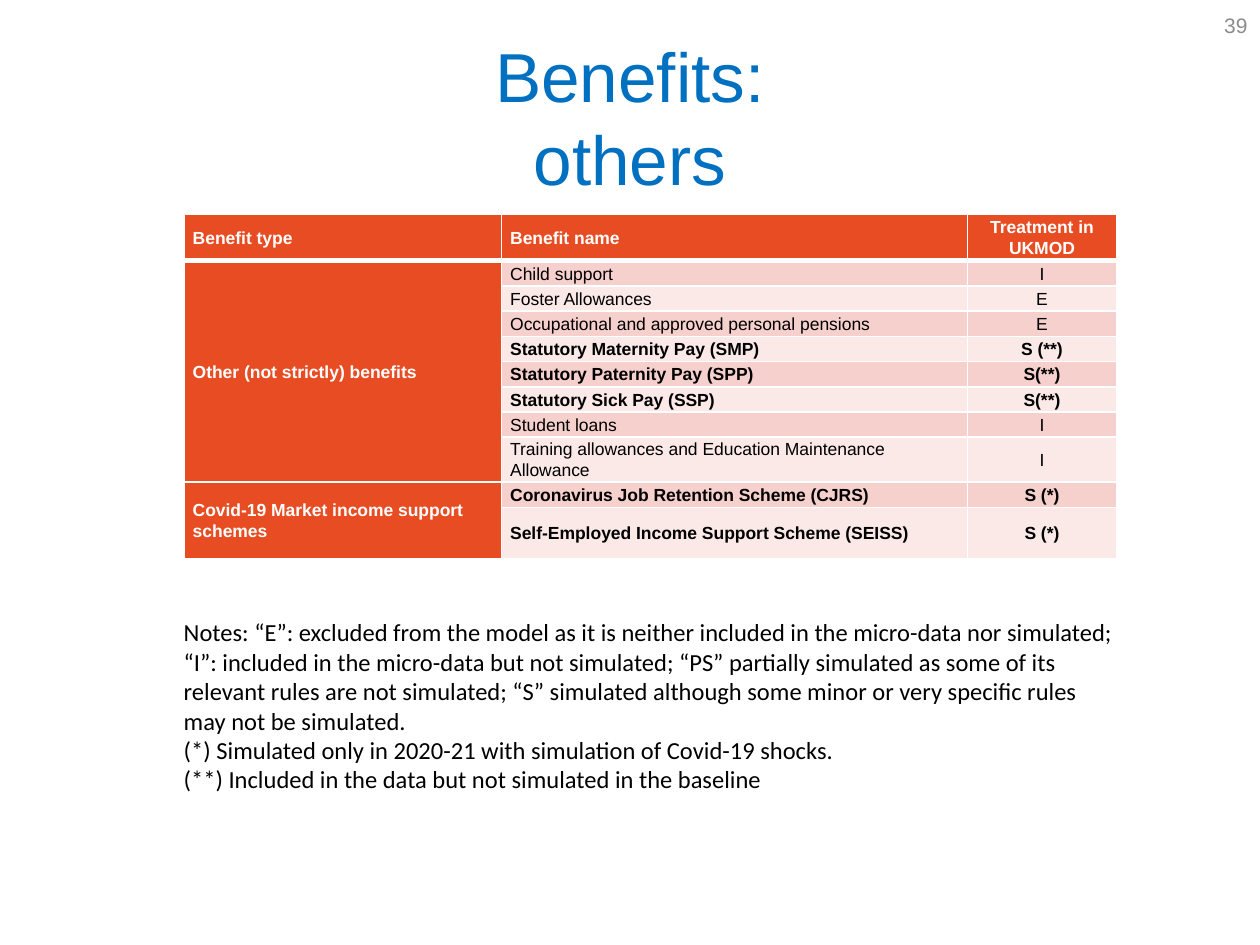
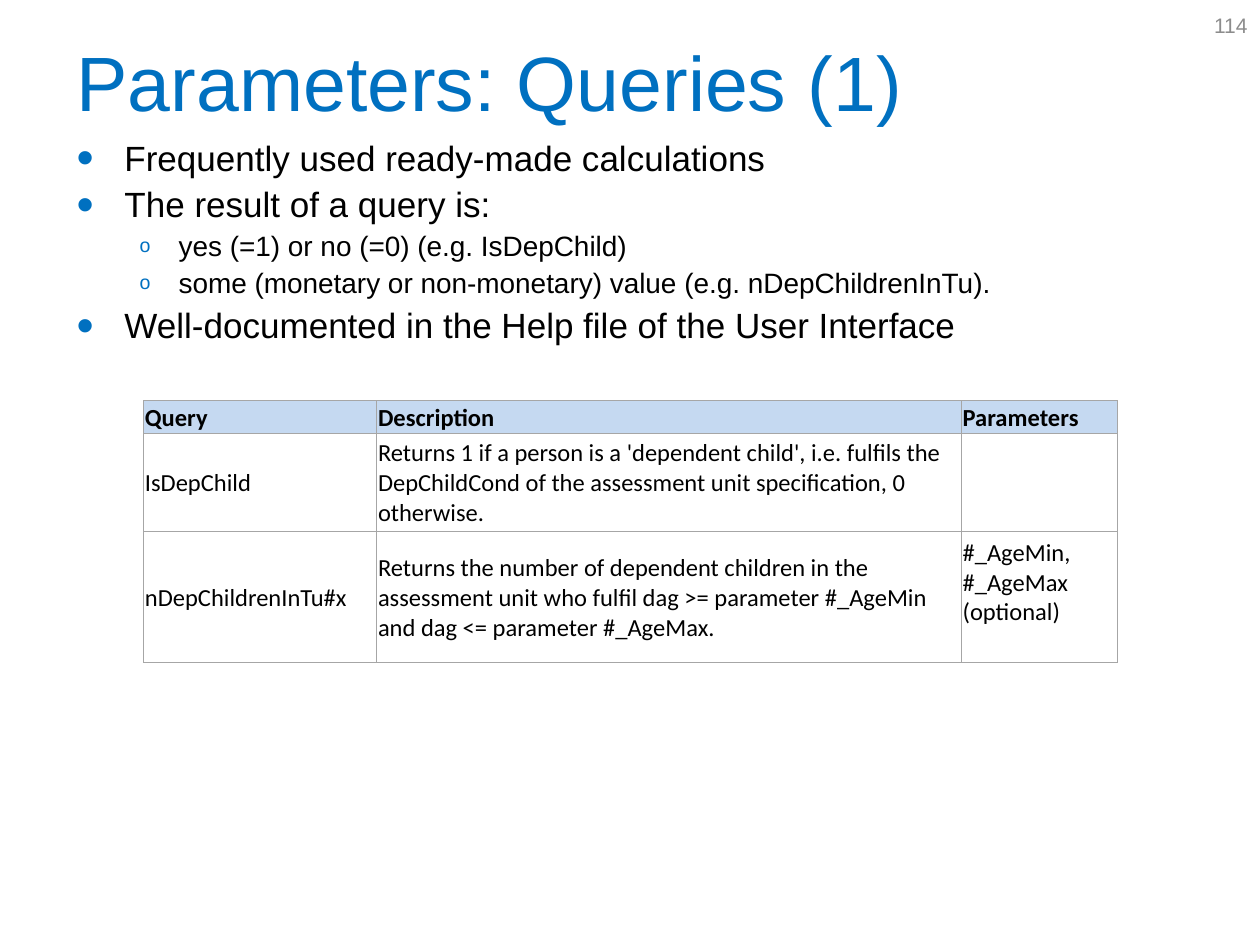
from lxml import etree
from pptx import Presentation
from pptx.dml.color import RGBColor
from pptx.enum.text import MSO_ANCHOR, PP_ALIGN
from pptx.oxml.ns import qn
from pptx.util import Inches, Pt

LEFT, CENTER, RIGHT = PP_ALIGN.LEFT, PP_ALIGN.CENTER, PP_ALIGN.RIGHT
TOP, MIDDLE = MSO_ANCHOR.TOP, MSO_ANCHOR.MIDDLE
BLACK = RGBColor(0x00, 0x00, 0x00)
WHITE = RGBColor(0xFF, 0xFF, 0xFF)
TITLE_BLUE = RGBColor(0x00, 0x70, 0xC0)
NUMBER_GREY = RGBColor(0x8C, 0x8C, 0x8C)
ORANGE = RGBColor(0xE8, 0x4C, 0x22)
DARK_BAND = RGBColor(0xF6, 0xD0, 0xCD)
LIGHT_BAND = RGBColor(0xFB, 0xE9, 0xE8)
HEADER_BLUE = RGBColor(0xC5, 0xD9, 0xF1)
BORDER_GREY = RGBColor(0xA6, 0xA6, 0xA6)
HEADING_FONT, TEXT_FONT = "Arial", "Calibri"


def add_text(slide, box, text, size, color, font=HEADING_FONT, align=LEFT, anchor=MIDDLE):
    shape = slide.shapes.add_textbox(*[Inches(length) for length in box])
    text_frame = shape.text_frame
    text_frame.word_wrap = True
    text_frame.vertical_anchor = anchor
    text_frame.text = text
    for paragraph in text_frame.paragraphs:
        paragraph.alignment = align
        for run in paragraph.runs:
            run.font.name, run.font.size, run.font.color.rgb = font, Pt(size), color
    return text_frame


def add_table(slide, left, top, widths, heights, rows, border_color, border_width, margins):
    table = slide.shapes.add_table(
        len(heights), len(widths), Inches(left), Inches(top),
        Inches(sum(widths)), Inches(sum(heights))).table
    table.first_row = table.horz_banding = False
    for column, width in zip(table.columns, widths):
        column.width = Inches(width)
    for row, height, texts in zip(table.rows, heights, rows):
        row.height = Inches(height)
        for cell, text in zip(row.cells, texts):
            cell.text = text
            cell.vertical_anchor = MIDDLE
            (cell.margin_left, cell.margin_top, cell.margin_right,
             cell.margin_bottom) = [Inches(margin) for margin in margins]
            properties = cell._tc.get_or_add_tcPr()
            for side in ("a:lnL", "a:lnR", "a:lnT", "a:lnB"):
                line = etree.SubElement(properties, qn(side), w=str(Pt(border_width)))
                fill = etree.SubElement(line, qn("a:solidFill"))
                etree.SubElement(fill, qn("a:srgbClr"), val=str(border_color))
    return table


presentation = Presentation()
presentation.slide_width, presentation.slide_height = Inches(10), Inches(7.5)

# Titles and slide numbers
titles = [
    ("Benefits:\nothers", (0.5, 0.3, 9, 1.25), 39.6, CENTER, "39"),
    ("Parameters: Queries (1)", (0.51, 0.13, 9, 1.02), 44, LEFT, "114"),
]
for title, box, size, align, number in titles:
    slide = presentation.slides.add_slide(presentation.slide_layouts[6])
    add_text(slide, box, title, size, TITLE_BLUE, align=align)
    add_text(slide, (7.67, 0, 2.33, 0.4), number, 12, NUMBER_GREY, align=RIGHT)
benefits_slide, queries_slide = presentation.slides

# Benefits: table, with the benefit type shown once per group
benefit_rows = [
    ("Benefit type", "Benefit name", "Treatment in UKMOD"),
    ("Other (not strictly) benefits", "Child support", "I"),
    ("", "Foster Allowances", "E"),
    ("", "Occupational and approved personal pensions", "E"),
    ("", "Statutory Maternity Pay (SMP)", "S (**)"),
    ("", "Statutory Paternity Pay (SPP)", "S(**)"),
    ("", "Statutory Sick Pay (SSP)", "S(**)"),
    ("", "Student loans", "I"),
    ("", "Training allowances and Education Maintenance Allowance", "I"),
    ("Covid-19 Market income support schemes",
     "Coronavirus Job Retention Scheme (CJRS)", "S (*)"),
    ("", "Self-Employed Income Support Scheme (SEISS)", "S (*)"),
]
benefits = add_table(
    benefits_slide, 1.46, 1.7, [2.52, 3.7, 1.18], [0.37] + [0.2] * 9 + [0.41],
    benefit_rows, WHITE, 1, (0.07, 0, 0.07, 0))
for row_index, row in enumerate(benefits.rows):
    simulated = benefit_rows[row_index][2].startswith("S")
    for column_index, cell in enumerate(row.cells):
        heading = row_index == 0 or column_index == 0
        band = DARK_BAND if row_index % 2 else LIGHT_BAND
        cell.fill.solid()
        cell.fill.fore_color.rgb = ORANGE if heading else band
        paragraph = cell.text_frame.paragraphs[0]
        paragraph.alignment = CENTER if column_index == 2 else LEFT
        paragraph.line_spacing = 1.07
        for run in paragraph.runs:
            run.font.name, run.font.size = HEADING_FONT, Pt(10)
            run.font.bold = heading or simulated
            run.font.color.rgb = WHITE if heading else BLACK
for cell in benefits.rows[0].cells:
    cell._tc.tcPr.find(qn("a:lnB")).set("w", str(Pt(3)))
for cell in benefits.rows[1].cells:
    cell._tc.tcPr.find(qn("a:lnT")).set("w", str(Pt(3)))
for first_row, last_row in ((1, 8), (9, 10)):
    benefits.cell(first_row, 0).merge(benefits.cell(last_row, 0))

# Benefits: notes
notes = (
    "Notes: “E”: excluded from the model as it is neither included in the micro-data "
    "nor simulated; “I”: included in the micro-data but not simulated; “PS” partially "
    "simulated as some of its relevant rules are not simulated; “S” simulated although "
    "some minor or very specific rules may not be simulated.\n"
    "(*) Simulated only in 2020-21 with simulation of Covid-19 shocks.\n"
    "(**) Included in the data but not simulated in the baseline")
add_text(benefits_slide, (1.36, 4.85, 7.59, 1.51), notes, 14, BLACK, TEXT_FONT, anchor=TOP)

# Queries: bullets, as (level, text)
bullets = [
    (0, "Frequently used ready-made calculations"),
    (0, "The result of a query is:"),
    (1, "yes (=1) or no (=0) (e.g. IsDepChild)"),
    (1, "some (monetary or non-monetary) value (e.g. nDepChildrenInTu)."),
    (0, "Well-documented in the Help file of the User Interface"),
]
# Per level: character, bullet size, left margin, hanging indent, text size, space before
bullet_styles = [("•", "140000", 0.38, -0.38, 20, 5), ("o", "70000", 0.81, -0.31, 16, 4)]
text_frame = add_text(queries_slide, (0.51, 1.07, 9, 2.05),
                      "\n".join(text for level, text in bullets), 20, BLACK, anchor=TOP)
for index, paragraph in enumerate(text_frame.paragraphs):
    level = bullets[index][0]
    character, bullet_size, margin, indent, size, space = bullet_styles[level]
    properties = paragraph._p.get_or_add_pPr()
    properties.set("marL", str(Inches(margin)))
    properties.set("indent", str(Inches(indent)))
    bullet_color = etree.SubElement(properties, qn("a:buClr"))
    etree.SubElement(bullet_color, qn("a:srgbClr"), val=str(TITLE_BLUE))
    etree.SubElement(properties, qn("a:buSzPct"), val=bullet_size)
    etree.SubElement(properties, qn("a:buFont"), typeface=HEADING_FONT)
    etree.SubElement(properties, qn("a:buChar"), char=character)
    paragraph.level = level
    paragraph.line_spacing = 0.9
    paragraph.space_before = Pt(space if index else 0)
    paragraph.runs[0].font.size = Pt(size)

# Queries: table
query_rows = [
    ("Query", "Description", "Parameters"),
    ("IsDepChild",
     "Returns 1 if a person is a 'dependent child', i.e. fulfils the DepChildCond of "
     "the assessment unit specification, 0 otherwise.", ""),
    ("nDepChildrenInTu#x",
     "Returns the number of dependent children in the assessment unit who fulfil "
     "dag >= parameter #_AgeMin and dag <= parameter #_AgeMax.",
     "#_AgeMin, #_AgeMax\n(optional)"),
]
queries = add_table(
    queries_slide, 1.14, 3.18, [1.85, 4.64, 1.24], [0.26, 0.78, 1.04],
    query_rows, BORDER_GREY, 0.5, (0.01, 0.01, 0.01, 0))
for row_index, row in enumerate(queries.rows):
    for cell in row.cells:
        cell.fill.solid()
        cell.fill.fore_color.rgb = WHITE if row_index else HEADER_BLUE
        for paragraph in cell.text_frame.paragraphs:
            for run in paragraph.runs:
                run.font.name, run.font.size = TEXT_FONT, Pt(14)
                run.font.bold = row_index == 0
                run.font.color.rgb = BLACK
# The optional parameters sit above the middle of their cell
queries.cell(2, 2).margin_bottom = Inches(0.24)

presentation.save("out.pptx")
